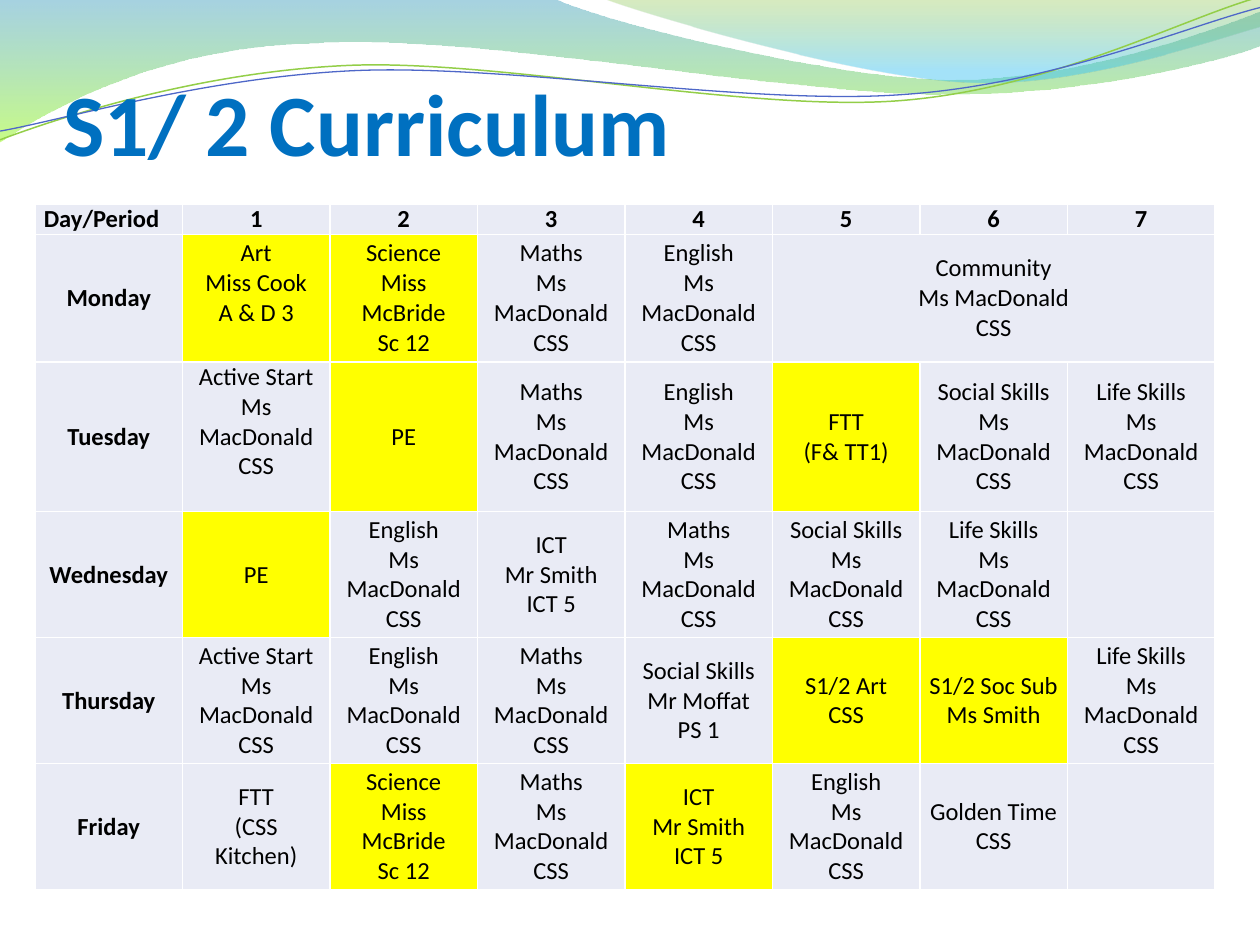
from dataclasses import dataclass

import pptx
import pptx.dml.color
import pptx.enum.text
import pptx.oxml.ns
import pptx.util
from lxml import etree

Pt = pptx.util.Pt
qn = pptx.oxml.ns.qn
Align = pptx.enum.text.PP_ALIGN
Anchor = pptx.enum.text.MSO_ANCHOR


@dataclass(frozen=True)
class Theme:
    font: str = "Calibri"
    title_size: float = 50
    cell_size: float = 14
    title: str = "0070C0"
    ink: str = "000000"
    plain: str = "E9EBF5"
    highlight: str = "FFFF00"
    border: str = "FFFFFF"
    green_line: str = "93CE48"
    blue_line: str = "4E67C8"
    wide_wave: tuple = ((0, "3B9CBF", 45), (1, "9CFA24", 55))
    corner_wave: tuple = ((0, "7EBE2C", 30), (0.8, "39C1F1", 45))


def rgb(value):
    return pptx.dml.color.RGBColor.from_string(value)


def write_text(frame, text, *, font, size, color, bold=False, align=Align.LEFT):
    for index, line in enumerate(text.split("\n")):
        para = frame.paragraphs[0] if index == 0 else frame.add_paragraph()
        para.alignment = align
        span = para.add_run()
        span.text = line
        span.font.name = font
        span.font.size = Pt(size)
        span.font.bold = bold
        span.font.color.rgb = rgb(color)


class PageBuilder:
    def __init__(self, page, theme):
        self.page = page
        self.theme = theme

    def outline(self, start, segments, closed):
        points = [
            (Pt(x), Pt(y))
            for segment in segments
            for x, y in zip(segment[::2], segment[1::2])
        ]
        builder = self.page.shapes.build_freeform(Pt(start[0]), Pt(start[1]))
        builder.add_line_segments(points, close=closed)
        shape = builder.convert_to_shape()
        shape.shadow.inherit = False
        lines = iter(list(shape._element.iter(qn("a:lnTo"))))
        for segment in segments:
            group = [next(lines) for _ in segment[::2]]
            if len(group) == 3:
                curve = group[0].makeelement(qn("a:cubicBezTo"))
                group[0].addprevious(curve)
                for line in group:
                    curve.append(line[0])
                    line.getparent().remove(line)
        return shape

    def wave(self, start, segments, stops):
        shape = self.outline(start, segments, True)
        shape.line.fill.background()
        shape.fill.gradient()
        shape.fill.gradient_angle = 270
        for stop, (position, color, _) in zip(shape.fill.gradient_stops, stops):
            stop.position = position
            stop.color.rgb = rgb(color)
        for node, (_, _, opacity) in zip(shape._element.iter(qn("a:srgbClr")), stops):
            etree.SubElement(node, qn("a:alpha"), val=str(opacity * 1000))

    def curve(self, start, segments, color, width):
        shape = self.outline(start, segments, False)
        shape.fill.background()
        shape.line.color.rgb = rgb(color)
        shape.line.width = Pt(width)

    def title(self, text, left, top, width, height):
        box = self.page.shapes.title
        self.page.shapes._spTree.append(box._element)
        box.left, box.top, box.width, box.height = map(Pt, (left, top, width, height))
        frame = box.text_frame
        frame.auto_size = pptx.enum.text.MSO_AUTO_SIZE.NONE
        frame.word_wrap = True
        frame.vertical_anchor = Anchor.BOTTOM
        frame.margin_left = frame.margin_right = frame.margin_bottom = 0
        frame.margin_top = Pt(3.6)
        write_text(frame, text, font=self.theme.font, size=self.theme.title_size,
                   color=self.theme.title, bold=True)

    def cell_borders(self, cell):
        properties = cell._tc.get_or_add_tcPr()
        for side in ("a:lnL", "a:lnR", "a:lnT", "a:lnB"):
            line = etree.SubElement(properties, qn(side), w=str(Pt(1)))
            fill = etree.SubElement(line, qn("a:solidFill"))
            etree.SubElement(fill, qn("a:srgbClr"), val=self.theme.border)

    def timetable(self, rows, left, top, column_width, heights, highlighted, merged, raised):
        columns = len(rows[0])
        table = self.page.shapes.add_table(
            len(rows), columns, Pt(left), Pt(top),
            Pt(column_width * columns), Pt(sum(heights)),
        ).table
        table.first_row = table.horz_banding = False
        for column in table.columns:
            column.width = Pt(column_width)
        for row, height in zip(table.rows, heights):
            row.height = Pt(height)
        for r, texts in enumerate(rows):
            for c, text in enumerate(texts):
                cell = table.cell(r, c)
                cell.margin_left = cell.margin_right = Pt(5)
                cell.margin_top = 0
                cell.margin_bottom = Pt(17 if (r, c) in raised else 0)
                cell.vertical_anchor = Anchor.MIDDLE if r else Anchor.TOP
                self.cell_borders(cell)
                cell.fill.solid()
                color = self.theme.highlight if (r, c) in highlighted else self.theme.plain
                cell.fill.fore_color.rgb = rgb(color)
                if text:
                    write_text(cell.text_frame, text, font=self.theme.font,
                               size=self.theme.cell_size, color=self.theme.ink,
                               bold=r == 0 or c == 0,
                               align=Align.CENTER if r or c else Align.LEFT)
        for first, last in merged:
            table.cell(*first).merge(table.cell(*last))


def class_lesson(subject):
    return f"{subject}\nMs MacDonald\nCSS"


def main():
    deck = pptx.Presentation()
    deck.slide_width, deck.slide_height = Pt(720), Pt(540)
    theme = Theme()
    builder = PageBuilder(deck.slides.add_slide(deck.slide_layouts[5]), theme)

    builder.wave((0, 0), [
        (316.8, -0.7),
        (342.7, 12.2, 478.1, 45.4, 545.8, 45.4),
        (614.2, 45.4, 689.8, 18.7, 720, 6.5),
        (720.7, 25.9),
        (707.8, 31.7, 626.4, 54.7, 537.1, 54),
        (447.8, 54, 275, 20.2, 185, 24.5),
        (92.9, 25.9, 33.1, 59.8, -0.7, 81.4),
    ], theme.wide_wave)
    builder.wave((344.9, -0.7), [
        (366.5, 7.9, 491, 44.6, 553.7, 46.8),
        (616.3, 49.7, 691.9, 23, 720, 15.1),
        (720, 0),
    ], theme.corner_wave)
    builder.curve((0, 79.9), [
        (34.6, 67, 113.8, 41, 199.4, 37.4),
        (284.4, 33.8, 427, 64.1, 513.4, 57.6),
        (599.8, 51.1, 675.4, 10.8, 718.6, -1.4),
    ], theme.green_line, 0.85)
    builder.curve((0, 74.9), [
        (33.8, 69.1, 118.1, 43.9, 203.8, 40.3),
        (290.2, 36.7, 429.8, 60.5, 516.2, 54),
        (601.9, 48.2, 677.5, 15.1, 720, 4.3),
    ], theme.blue_line, 0.75)
    builder.title("S1/ 2 Curriculum", 36, 9.4, 648, 90)

    maths, english, social, life, start = map(
        class_lesson, ("Maths", "English", "Social Skills", "Life Skills", "Active Start"))
    science = "Science\nMiss McBride\nSc 12"
    ict = "ICT\nMr Smith\nICT 5"
    rows = [
        ["Day/Period", *map(str, range(1, 8))],
        ["Monday", "Art\nMiss Cook\nA & D 3", science, maths, english,
         class_lesson("Community"), "", ""],
        ["Tuesday", start, "PE", maths, english, "FTT\n(F& TT1)", social, life],
        ["Wednesday", "PE", english, ict, maths, social, life, ""],
        ["Thursday", start, english, maths, "Social Skills\nMr Moffat\nPS 1",
         "S1/2 Art\nCSS", "S1/2 Soc Sub\nMs Smith", life],
        ["Friday", "FTT\n(CSS Kitchen)", science, maths, ict, english,
         "Golden Time\nCSS", ""],
    ]
    builder.timetable(
        rows, 20, 116.8, 84.3, (17.2, 72.8, 85.6, 72, 72, 72),
        highlighted={(1, 1), (1, 2), (2, 2), (2, 5), (3, 1), (4, 5), (4, 6), (5, 2), (5, 4)},
        merged=[((1, 5), (1, 7))],
        raised={(1, 1), (2, 1)},
    )
    deck.save("out.pptx")


if __name__ == "__main__":
    main()
